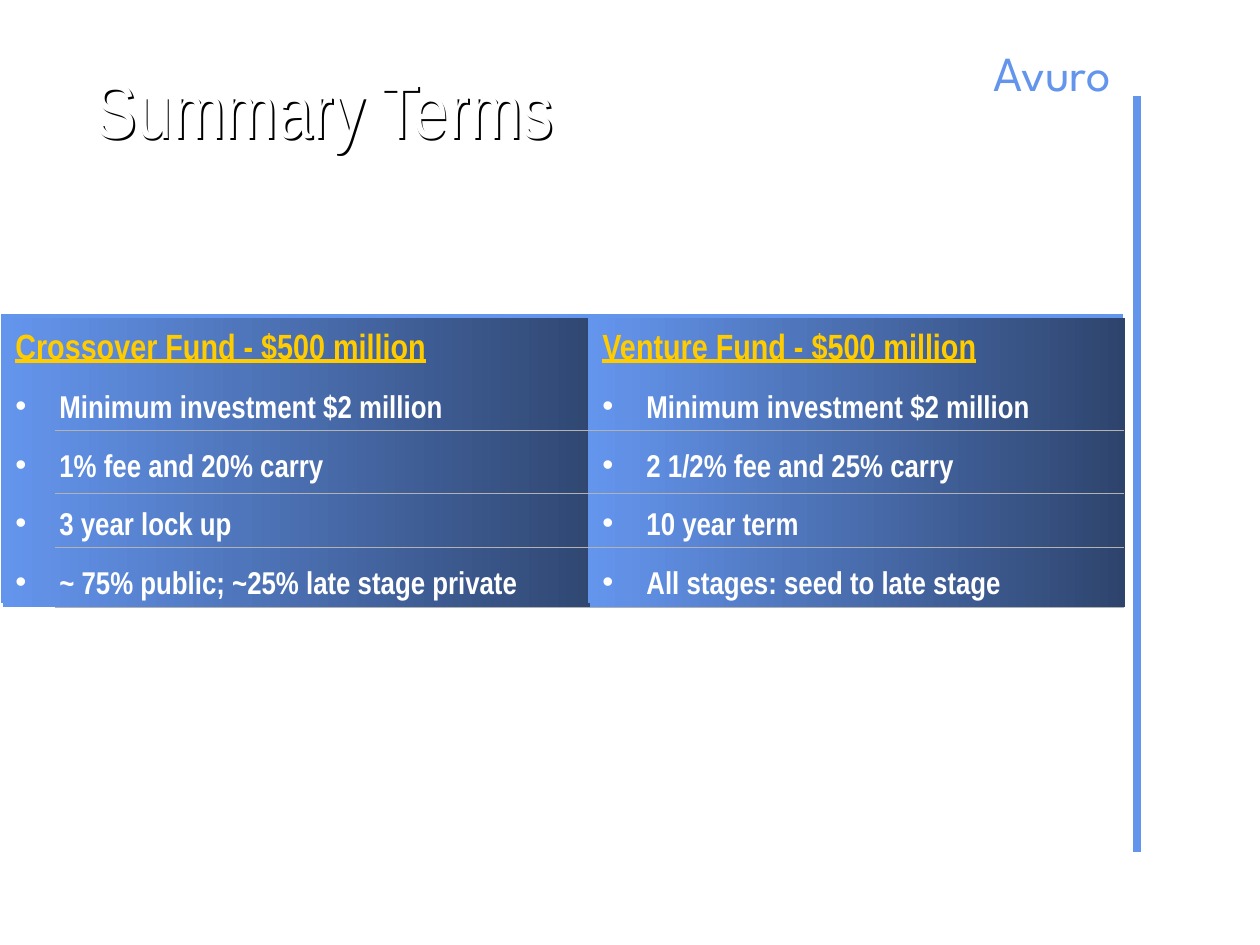
from dataclasses import dataclass

from lxml.etree import SubElement
from pptx import Presentation
from pptx.dml.color import RGBColor
from pptx.enum.shapes import MSO_CONNECTOR, MSO_SHAPE
from pptx.enum.text import MSO_ANCHOR, PP_ALIGN
from pptx.oxml.ns import qn
from pptx.util import Emu, Pt

SCALE = 914400 / 126


@dataclass(frozen=True)
class Theme:
    blue: str = "6495ED"
    navy: str = "2E446D"
    gold: str = "FFCC00"
    white: str = "FFFFFF"
    black: str = "000000"
    grey: str = "B2B2B2"
    font: str = "Arial Narrow"
    brand: str = "League Spartan"
    title: int = 44
    name: int = 28
    head: int = 20
    body: int = 18


@dataclass(frozen=True)
class Box:
    left: int
    top: int
    width: int
    height: int


@dataclass(frozen=True)
class Fund:
    box: Box
    head: str
    terms: tuple[str, ...]


@dataclass(frozen=True)
class Rule:
    start: tuple[int, int]
    end: tuple[int, int]
    color: str
    weight: float


THEME = Theme()
FUNDS = (
    Fund(Box(3, 318, 612, 289), "Crossover Fund - $500 million",
         ("Minimum investment $2 million", "1% fee and 20% carry",
          "3 year lock up", "~ 75% public; ~25% late stage private")),
    Fund(Box(590, 318, 535, 289), "Venture Fund - $500 million",
         ("Minimum investment $2 million", "2 1/2% fee and 25% carry",
          "10 year term", "All stages: seed to late stage")),
)
BAR = Rule((1137, 96), (1137, 852), THEME.blue, 4.5)
RULES = tuple(Rule((55, y), (1124, y), THEME.grey, 0.25)
              for y in (430, 493, 547, 607))


def px(size: int) -> Emu:
    return Emu(round(size * SCALE))


def place(box: Box) -> tuple[Emu, ...]:
    return px(box.left), px(box.top), px(box.width), px(box.height)


def rgb(color: str) -> RGBColor:
    return RGBColor.from_string(color)


def add_run(para, text: str, size: int, color: str, font: str = THEME.font,
            bold: bool = False, under: bool = False) -> None:
    run = para.add_run()
    run.text = text
    face = run.font
    face.name, face.size, face.bold, face.underline = font, Pt(size), bold, under
    face.color.rgb = rgb(color)


def add_shade(shape, color: str, dist: float, angle: int) -> None:
    """Give a shape a hard outer shadow."""
    shape.shadow.inherit = False
    effects = shape._element.spPr.find(qn("a:effectLst"))
    shade = SubElement(effects, qn("a:outerShdw"), dist=str(Pt(dist)),
                       dir=str(angle * 60000), algn="ctr", rotWithShape="0")
    SubElement(shade, qn("a:srgbClr"), val=color)


def add_label(slide, box: Box, anchor: MSO_ANCHOR):
    """Add a text box without margins."""
    label = slide.shapes.add_textbox(*place(box))
    frame = label.text_frame
    frame.word_wrap = True
    frame.vertical_anchor = anchor
    frame.margin_left = frame.margin_right = 0
    frame.margin_top = frame.margin_bottom = 0
    return label


def add_rule(slide, rule: Rule) -> None:
    line = slide.shapes.add_connector(
        MSO_CONNECTOR.STRAIGHT, *map(px, rule.start + rule.end))
    line.line.color.rgb = rgb(rule.color)
    line.line.width = Pt(rule.weight)
    SubElement(line._element.spPr, qn("a:effectLst"))


def add_term(frame, text: str) -> None:
    para = frame.add_paragraph()
    para.alignment = PP_ALIGN.LEFT
    para.line_spacing = 1.55
    props = para._p.get_or_add_pPr()
    props.set("marL", str(px(44)))
    props.set("indent", str(px(-44)))
    tint = SubElement(props, qn("a:buClr"))
    SubElement(tint, qn("a:srgbClr"), val=THEME.white)
    SubElement(props, qn("a:buFont"), typeface="Arial")
    SubElement(props, qn("a:buChar"), char="•")
    add_run(para, text, THEME.body, THEME.white, bold=True)


def add_fund(slide, fund: Fund) -> None:
    panel = slide.shapes.add_shape(MSO_SHAPE.RECTANGLE, *place(fund.box))
    panel.line.fill.background()
    panel.fill.gradient()
    panel.fill.gradient_angle = 180
    for stop, color in zip(panel.fill.gradient_stops, (THEME.navy, THEME.blue)):
        stop.color.rgb = rgb(color)
    add_shade(panel, THEME.blue, 2.2, 244)

    frame = panel.text_frame
    frame.word_wrap = True
    frame.vertical_anchor = MSO_ANCHOR.TOP
    head = frame.paragraphs[0]
    head.alignment = PP_ALIGN.LEFT
    add_run(head, fund.head, THEME.head, THEME.gold, bold=True, under=True)
    for term in fund.terms:
        add_term(frame, term)


def add_name(slide) -> None:
    label = add_label(slide, Box(978, 43, 148, 59), MSO_ANCHOR.TOP)
    para = label.text_frame.paragraphs[0]
    para.alignment = PP_ALIGN.CENTER
    add_run(para, "Avuro", THEME.name, THEME.blue, THEME.brand)


def add_title(slide) -> None:
    label = add_label(slide, Box(95, 29, 938, 158), MSO_ANCHOR.MIDDLE)
    para = label.text_frame.paragraphs[0]
    add_run(para, "Summary Terms", THEME.title, THEME.white)
    add_shade(label, THEME.black, 1.6, 45)


def main() -> None:
    deck = Presentation()
    deck.slide_width, deck.slide_height = px(1260), px(945)
    slide = deck.slides.add_slide(deck.slide_layouts[6])
    add_name(slide)
    add_rule(slide, BAR)
    add_title(slide)
    for fund in FUNDS:
        add_fund(slide, fund)
    for rule in RULES:
        add_rule(slide, rule)
    deck.save("out.pptx")


if __name__ == "__main__":
    main()
